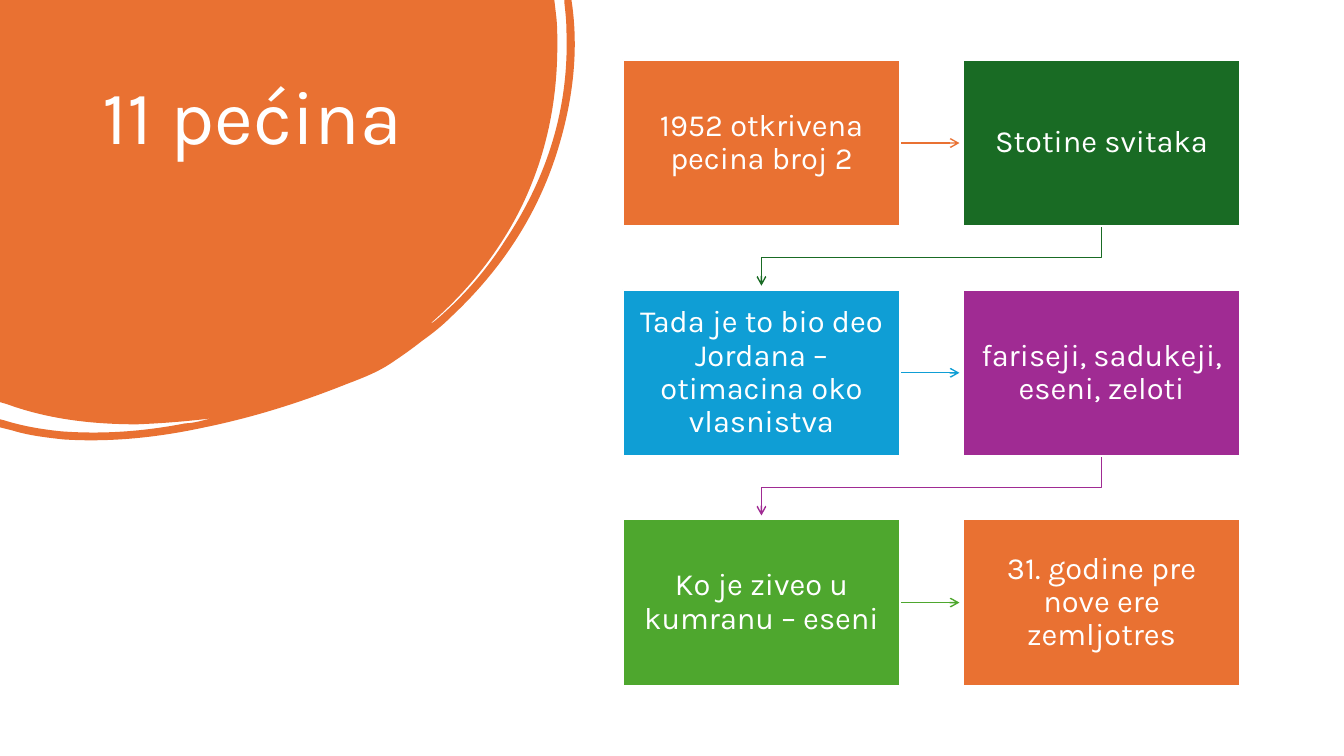
"""Builds a slide with a rounded title blob and a zigzag of six linked boxes."""
from lxml import etree
from pptx import Presentation
from pptx.enum import shapes, text
from pptx.dml.color import RGBColor
from pptx.oxml import ns
from pptx.util import Cm, Pt

HUES = {"orange": "E97132", "forest": "196B24", "blue": "0F9ED5",
        "purple": "A02B93", "green": "4EA72E", "white": "FFFFFF"}
FONT = "Karla"
TITLE = "11 pećina"
STEPS = [
    ("1952 otkrivena pecina broj 2", "orange"),
    ("Stotine svitaka", "forest"),
    ("Tada je to bio deo Jordana – otimacina oko vlasnistva", "blue"),
    ("fariseji, sadukeji, eseni, zeloti", "purple"),
    ("Ko je ziveo u kumranu – eseni", "green"),
    ("31. godine pre nove ere zemljotres", "orange"),
]
INCH = 2.54
SPECK = [(2.13, 4.14), (2.12, 4.14), (2.13, 4.14),
         (2.13, 4.14, 2.13, 4.14, 2.13, 4.14)]
BLOB = [
    (0, 0), (5.5, 0), (5.52, 0.17),
    (5.53, 0.26, 5.53, 0.36, 5.53, 0.45),
    (5.53, 1.01, 5.42, 1.54, 5.18, 2.04),
    (4.96, 2.49, 4.65, 2.88, 4.27, 3.21),
    (4.29, 3.21, 4.3, 3.19, 4.32, 3.18),
    (4.59, 2.95, 4.82, 2.69, 5.01, 2.39),
    (5.43, 1.76, 5.65, 1.07, 5.62, 0.3),
    (5.62, 0.21, 5.61, 0.12, 5.6, 0.03),
    (5.6, 0), (5.67, 0), (5.68, 0.07),
    (5.74, 0.54, 5.68, 1.02, 5.53, 1.5),
    (5.33, 2.14, 4.97, 2.68, 4.48, 3.14),
    (4.39, 3.23, 4.29, 3.31, 4.19, 3.38),
    (4.09, 3.46, 3.99, 3.53, 3.87, 3.61),
    (3.75, 3.69, 3.6, 3.75, 3.44, 3.81),
    (2.99, 3.99, 2.52, 4.14, 2.03, 4.24),
    (1.57, 4.34, 1.1, 4.39, 0.63, 4.36),
    (0.45, 4.34, 0.28, 4.32, 0.12, 4.27),
    (0, 4.24), (0, 4.16), (0.04, 4.17),
    (0.23, 4.23, 0.42, 4.26, 0.61, 4.28),
    (1.03, 4.31, 1.43, 4.28, 1.84, 4.2),
    (1.89, 4.2, 1.93, 4.19, 1.98, 4.18),
    (2.02, 4.17, 2.06, 4.16, 2.1, 4.15),
    (1.86, 4.18, 1.61, 4.2, 1.36, 4.21),
    (0.92, 4.21, 0.48, 4.16, 0.07, 4.01),
    (0, 3.99),
]
LEFT, TOP, WIDE, HIGH = 15.7, 1.51, 6.98, 4.19
STEP_X, STEP_Y = 8.57, 5.79
REACH, BEND, LAP, SLIM = 1.52, 0.81, 0.02, 0.25


def hue(name):
    return RGBColor.from_string(HUES[name])


def outline(slide, area, loops, close, unit=1):
    x, y, w, h = (Cm(n * unit) for n in area)
    pen = slide.shapes.build_freeform(x, y)
    pen.add_line_segments([(x + w, y), (x + w, y + h), (x, y + h)])
    form = pen.convert_to_shape()
    form.shadow.inherit = False
    track = form._element.spPr.find(".//" + ns.qn("a:path"))
    for old in list(track):
        track.remove(old)
    for loop in loops:
        for i, part in enumerate(loop):
            verb = "moveTo" if i == 0 else "lnTo" if len(part) == 2 else "cubicBezTo"
            node = etree.SubElement(track, ns.qn("a:" + verb))
            for px, py in zip(part[::2], part[1::2]):
                etree.SubElement(node, ns.qn("a:pt"),
                                 x=str(Cm(px * unit) - x), y=str(Cm(py * unit) - y))
        if close:
            etree.SubElement(track, ns.qn("a:close"))
    return form


def write(frame, words, size):
    frame.word_wrap = True
    para = frame.paragraphs[0]
    para.text = words
    para.line_spacing = 0.9
    para.font.name, para.font.size = FONT, Pt(size)
    para.font.color.rgb = hue("white")
    return para


def add_box(slide, x, y, words, color):
    box = slide.shapes.add_shape(shapes.MSO_SHAPE.RECTANGLE, Cm(x), Cm(y), Cm(WIDE), Cm(HIGH))
    box.shadow.inherit = False
    box.fill.solid()
    box.fill.fore_color.rgb = hue(color)
    box.line.color.rgb = hue("white")
    box.line.width = Pt(1.5)
    frame = box.text_frame
    frame.vertical_anchor = text.MSO_ANCHOR.MIDDLE
    frame.margin_left = frame.margin_right = Cm(0.34)
    frame.margin_top = frame.margin_bottom = Cm(0.36)
    write(frame, words, 22).alignment = text.PP_ALIGN.CENTER


def add_link(slide, x, y, col, color):
    if col == 0:
        end, mid = x + WIDE - LAP, y + HIGH / 2
        area = (end, mid - SLIM / 2, REACH, SLIM)
        dots = [(end, mid), (end + REACH, mid)]
    else:
        mid, base = x + WIDE / 2, y + HIGH - LAP
        turn, goal = base + BEND, mid - STEP_X
        area = (goal, base, STEP_X, REACH)
        dots = [(mid, base), (mid, turn), (goal, turn), (goal, base + REACH)]
    link = outline(slide, area, [dots], False)
    link.fill.background()
    link.line.color.rgb = hue(color)
    link.line.width = Pt(1)
    etree.SubElement(link.line._get_or_add_ln(), ns.qn("a:tailEnd"), type="arrow")


def main():
    deck = Presentation()
    deck.slide_width, deck.slide_height = Cm(33.87), Cm(19.05)
    slide = deck.slides.add_slide(deck.slide_layouts[6])
    blob = outline(slide, (0, 0, 5.71, 4.37), [SPECK, BLOB], True, INCH)
    blob.fill.solid()
    blob.fill.fore_color.rgb = hue("orange")
    blob.line.fill.background()
    head = slide.shapes.add_textbox(Cm(2.34), Cm(1.88), Cm(8.94), Cm(5.64))
    write(head.text_frame, TITLE, 54)
    for i, (words, color) in enumerate(STEPS):
        row, col = divmod(i, 2)
        x, y = LEFT + col * STEP_X, TOP + row * STEP_Y
        if i < len(STEPS) - 1:
            add_link(slide, x, y, col, color)
        add_box(slide, x, y, words, color)
    deck.save("out.pptx")


if __name__ == "__main__":
    main()
